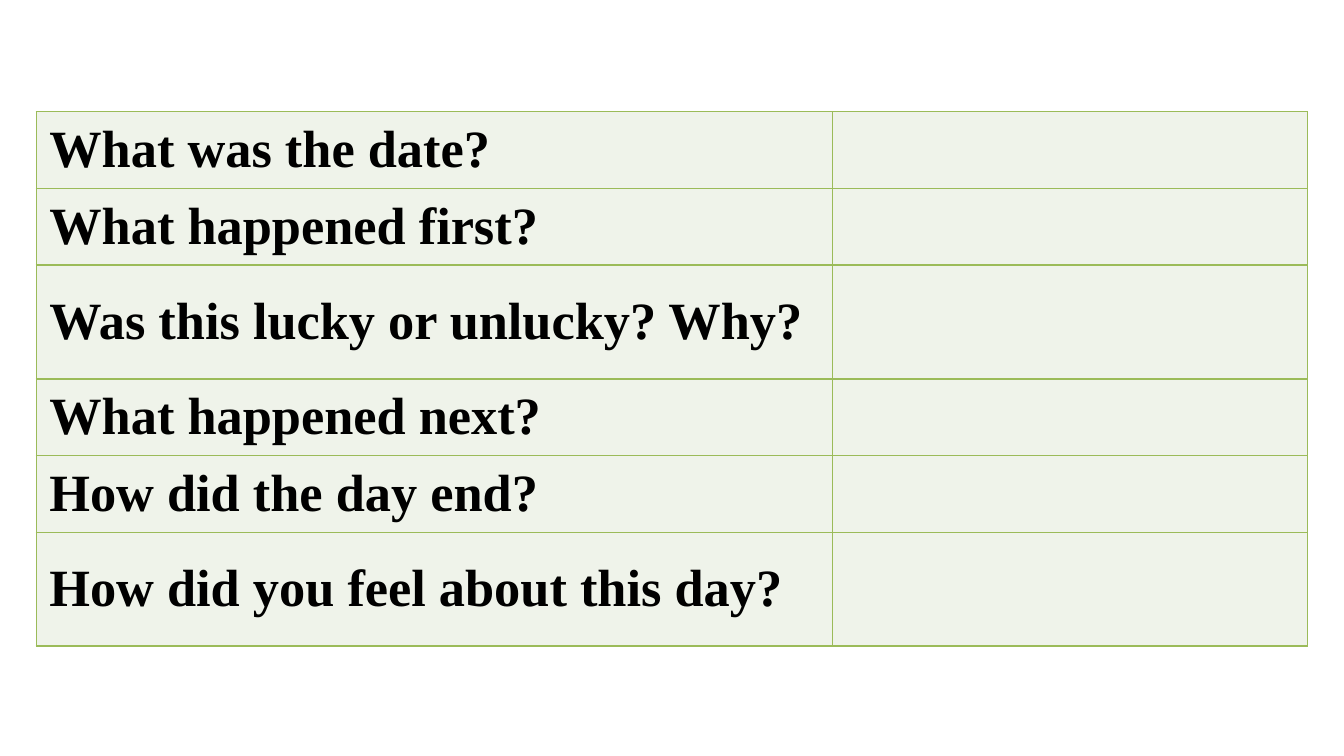
from dataclasses import dataclass

import pptx
import pptx.dml.color
import pptx.enum.text
import pptx.oxml
import pptx.oxml.ns
import pptx.table
import pptx.util

EMU_PER_PX = 9144  # 100 px to the inch


@dataclass(frozen=True)
class Theme:
    font: str = "Times New Roman"
    text_size: float = 37.4
    text_color: str = "000000"
    cell_fill: str = "EFF3EA"
    border_color: str = "9BBB59"
    border_width: float = 1


@dataclass(frozen=True)
class QuestionRow:
    question: str
    height: int


THEME = Theme()
SHORT_ROW, TALL_ROW = 76, 113
COLUMN_WIDTHS = (790, 471)
QUESTIONS = (
    QuestionRow("What was the date?", SHORT_ROW),
    QuestionRow("What happened first?", SHORT_ROW),
    QuestionRow("Was this lucky or unlucky? Why?", TALL_ROW),
    QuestionRow("What happened next?", SHORT_ROW),
    QuestionRow("How did the day end?", SHORT_ROW),
    QuestionRow("How did you feel about this day?", TALL_ROW),
)


def px(length: int) -> pptx.util.Emu:
    return pptx.util.Emu(length * EMU_PER_PX)


def rgb(color: str) -> pptx.dml.color.RGBColor:
    return pptx.dml.color.RGBColor.from_string(color)


def draw_borders(cell: pptx.table._Cell) -> None:
    properties = cell._tc.get_or_add_tcPr()
    width = pptx.util.Pt(THEME.border_width)
    for side in ("lnL", "lnR", "lnT", "lnB"):
        properties.append(pptx.oxml.parse_xml(
            f'<a:{side} {pptx.oxml.ns.nsdecls("a")} w="{width}">'
            f'<a:solidFill><a:srgbClr val="{THEME.border_color}"/></a:solidFill>'
            f'</a:{side}>'
        ))


def format_cell(cell: pptx.table._Cell) -> None:
    draw_borders(cell)
    cell.fill.solid()
    cell.fill.fore_color.rgb = rgb(THEME.cell_fill)
    cell.vertical_anchor = pptx.enum.text.MSO_ANCHOR.MIDDLE
    cell.margin_left = cell.margin_right = px(13)
    cell.margin_top = cell.margin_bottom = px(7)


def write_question(cell: pptx.table._Cell, question: str) -> None:
    cell.text_frame.text = question
    font = cell.text_frame.paragraphs[0].runs[0].font
    font.name = THEME.font
    font.size = pptx.util.Pt(THEME.text_size)
    font.bold = True
    font.color.rgb = rgb(THEME.text_color)


def draw_question_table(slide: pptx.slide.Slide) -> None:
    table_height = sum(row.height for row in QUESTIONS)
    table = slide.shapes.add_table(
        len(QUESTIONS), len(COLUMN_WIDTHS),
        px(36), px(111), px(sum(COLUMN_WIDTHS)), px(table_height),
    ).table
    table.first_row = table.horz_banding = False

    for column, width in zip(table.columns, COLUMN_WIDTHS):
        column.width = px(width)
    for row, entry in zip(table.rows, QUESTIONS):
        row.height = px(entry.height)
        for cell in row.cells:
            format_cell(cell)
        write_question(row.cells[0], entry.question)


def main() -> None:
    # Blank widescreen slide
    presentation = pptx.Presentation()
    presentation.slide_width = px(1333)
    presentation.slide_height = px(750)
    slide = presentation.slides.add_slide(presentation.slide_layouts[6])

    # Questions on the left, room for answers on the right
    draw_question_table(slide)
    presentation.save("out.pptx")


if __name__ == "__main__":
    main()
